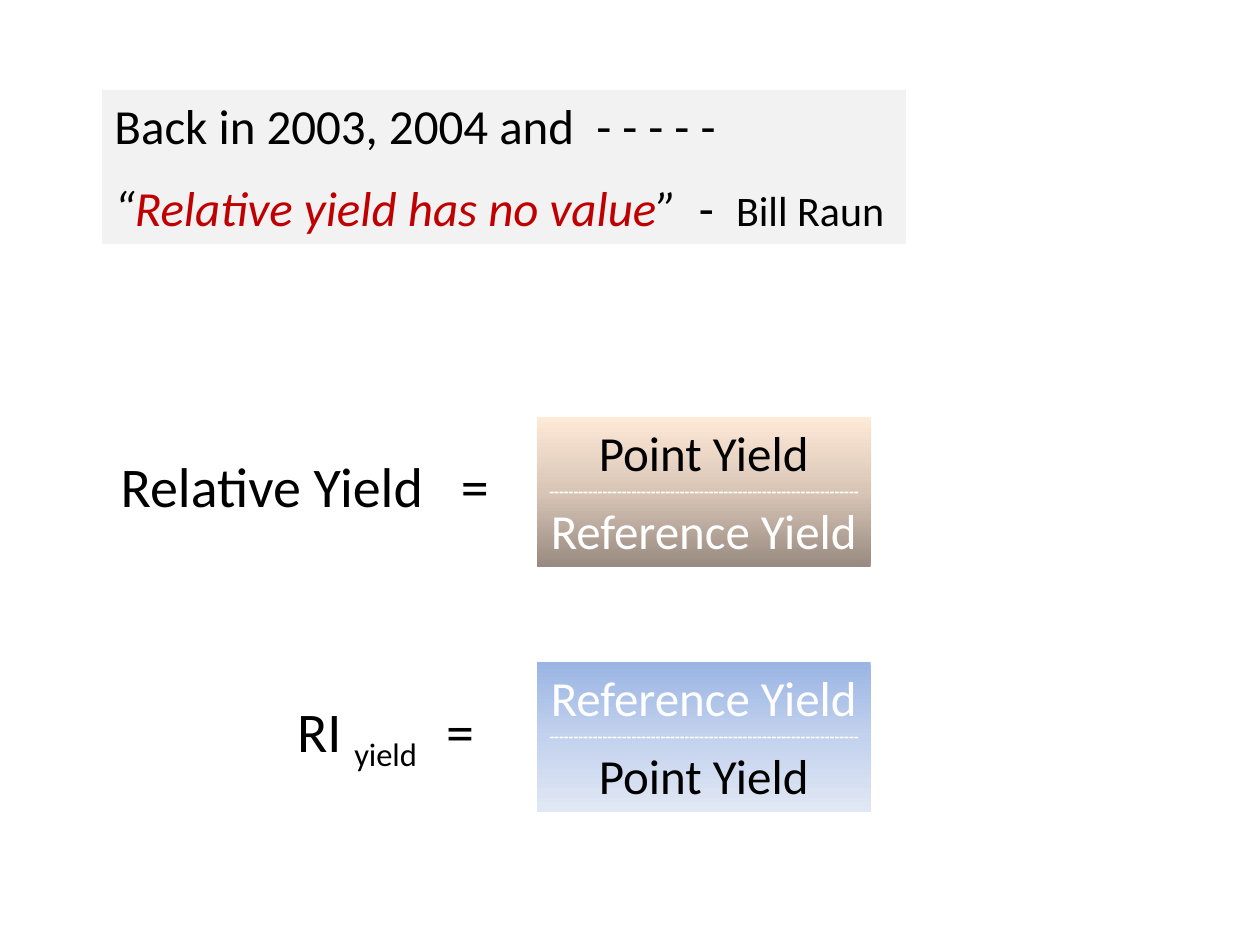
from copy import deepcopy
from pptx import Presentation
from pptx.dml.color import RGBColor as RGB
from pptx.enum.shapes import MSO_SHAPE as SHAPE
from pptx.enum.text import MSO_ANCHOR as ANCHOR, PP_ALIGN as ALIGN
from pptx.oxml.ns import qn
from pptx.util import Inches, Pt

THEME = {
    "font": "Calibri",
    "black": "000000", "white": "FFFFFF", "red": "C00000", "panel": "F2F2F2",
    "brown": ["988A80", "D8C5B6", "FFEAD8"],
    "blue": ["9AB5E4", "C2D1ED", "E1E8F5"],
    "label": 32, "body": 28, "name": 24, "rule": 9, "gap": 12.8,
}

prs = Presentation()
prs.slide_width, prs.slide_height = Inches(10), Inches(7.5)
W, H = prs.slide_width, prs.slide_height
s = prs.slides.add_slide(prs.slide_layouts[6])


def write(p, text, size=THEME["body"], color="black", bold=False, italic=False, baseline=0):
    r = p.add_run()
    r.text = text
    r.font.name = THEME["font"]
    r.font.size = Pt(size)
    r.font.bold = bold
    r.font.italic = italic
    r.font.color.rgb = RGB.from_string(THEME[color])
    if baseline:
        r._r.get_or_add_rPr().set("baseline", str(baseline * 1000))


def add_rect(shapes, x, y, w, h):
    sp = shapes.add_shape(SHAPE.RECTANGLE, int(W * x), int(H * y), int(W * w), int(H * h))
    sp.shadow.inherit = False
    sp.line.fill.background()
    tf = sp.text_frame
    tf.word_wrap = False
    tf.vertical_anchor = ANCHOR.TOP
    return sp


LABEL_H, FRACTION_X, FRACTION_W, FRACTION_H = 0.085, 0.426, 0.265, 0.159
point, reference = ("Point Yield", "black"), ("Reference Yield", "white")
equations = [
    (0.441, 0.086, 0.336, [("Relative Yield   =", 0)], "brown", 90, point, reference),
    (0.7, 0.226, 0.174, [("RI ", 0), ("yield    ", -25), ("=", 0)], "blue", 270, reference, point),
]

for top, label_x, label_w, label, colors, angle, upper, lower in equations:
    group = s.shapes.add_group_shape()
    label_y = top + 0.03
    tb = group.shapes.add_textbox(int(W * label_x), int(H * label_y), int(W * label_w), int(H * LABEL_H))
    tb.text_frame.word_wrap = False
    for text, baseline in label:
        write(tb.text_frame.paragraphs[0], text, size=THEME["label"], baseline=baseline)

    sp = add_rect(group.shapes, FRACTION_X, top, FRACTION_W, FRACTION_H)
    sp.fill.gradient()
    sp.fill.gradient_angle = angle
    stops = sp._element.spPr.find(".//" + qn("a:gsLst"))
    stops.insert(1, deepcopy(stops[0]))
    for i, stop in enumerate(sp.fill.gradient_stops):
        stop.color.rgb = RGB.from_string(THEME[colors][i])
        stop.position = i / 2

    tf = sp.text_frame
    rows = [(*upper, THEME["body"], False), ("-" * 64, "white", THEME["rule"], True),
            (*lower, THEME["body"], False)]
    for i, (text, color, size, bold) in enumerate(rows):
        p = tf.add_paragraph() if i else tf.paragraphs[0]
        p.alignment = ALIGN.CENTER
        write(p, text, size=size, color=color, bold=bold)

sp = add_rect(s.shapes, 0.081, 0.095, 0.638, 0.163)
sp.fill.solid()
sp.fill.fore_color.rgb = RGB.from_string(THEME["panel"])
tf = sp.text_frame
p = tf.paragraphs[0]
p.alignment = ALIGN.LEFT
write(p, "Back in 2003, 2004 and  - - - - -")
p = tf.add_paragraph()
p.alignment = ALIGN.LEFT
p.space_before = Pt(THEME["gap"])
write(p, "“", italic=True)
write(p, "Relative yield has no value", color="red", italic=True)
write(p, "”", italic=True)
write(p, "  -  ")
write(p, "Bill Raun", size=THEME["name"])

prs.save("out.pptx")
